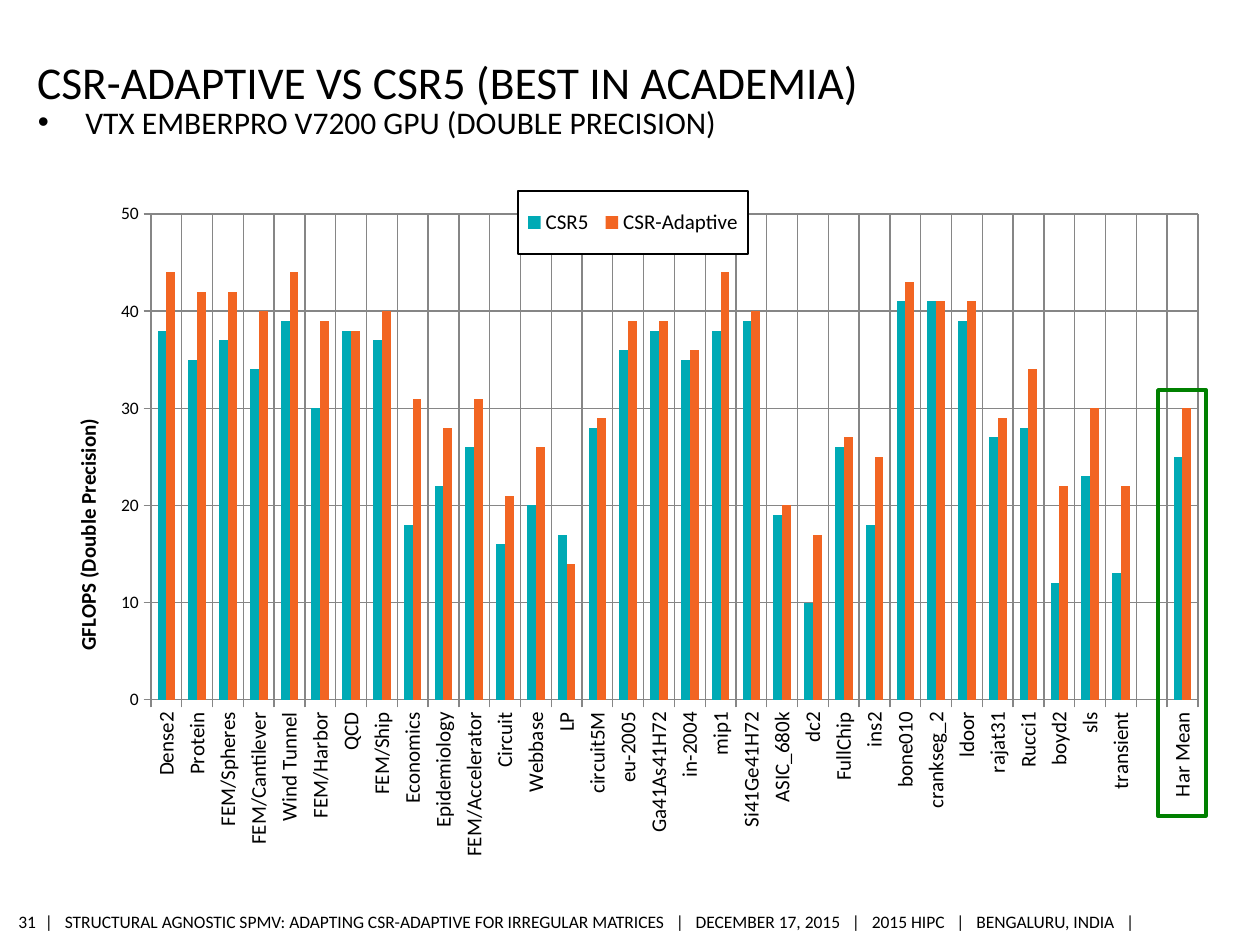
from lxml import etree
from pptx import Presentation
from pptx.chart.data import CategoryChartData
from pptx.dml.color import RGBColor
from pptx.enum.chart import XL_CHART_TYPE, XL_LEGEND_POSITION, XL_TICK_MARK
from pptx.enum.shapes import MSO_SHAPE
from pptx.enum.text import MSO_ANCHOR, MSO_AUTO_SIZE, PP_ALIGN
from pptx.oxml import parse_xml
from pptx.oxml.ns import nsdecls, qn
from pptx.util import Emu, Pt

PX = 914400 / 126
FONT = "Calibri"
COLORS = {"text": "000000", "grid": "868686", "csr5": "00AAB5",
          "adaptive": "F26522", "highlight": "008000"}

RESULTS = [
    ("Dense2", 38, 44), ("Protein", 35, 42), ("FEM/Spheres", 37, 42),
    ("FEM/Cantilever", 34, 40), ("Wind Tunnel", 39, 44), ("FEM/Harbor", 30, 39),
    ("QCD", 38, 38), ("FEM/Ship", 37, 40), ("Economics", 18, 31),
    ("Epidemiology", 22, 28), ("FEM/Accelerator", 26, 31), ("Circuit", 16, 21),
    ("Webbase", 20, 26), ("LP", 17, 14), ("circuit5M", 28, 29),
    ("eu-2005", 36, 39), ("Ga41As41H72", 38, 39), ("in-2004", 35, 36),
    ("mip1", 38, 44), ("Si41Ge41H72", 39, 40), ("ASIC_680k", 19, 20),
    ("dc2", 10, 17), ("FullChip", 26, 27), ("ins2", 18, 25),
    ("bone010", 41, 43), ("crankseg_2", 41, 41), ("ldoor", 39, 41),
    ("rajat31", 27, 29), ("Rucci1", 28, 34), ("boyd2", 12, 22),
    ("sls", 23, 30), ("transient", 13, 22), ("", None, None),
    ("Har Mean", 25, 30),
]


def px(*lengths):
    return [Emu(round(n * PX)) for n in lengths]


def rgb(name):
    return RGBColor.from_string(COLORS[name])


def style_font(font, size, bold=False):
    font.name, font.size, font.bold = FONT, Pt(size), bold
    font.color.rgb = rgb("text")


def write(tf, text, size, anchor, insets, align=PP_ALIGN.LEFT):
    """Fill a text frame; insets are left, top, right, bottom in px."""
    tf.text = text
    tf.vertical_anchor = anchor
    tf.margin_left, tf.margin_top, tf.margin_right, tf.margin_bottom = px(*insets)
    p = tf.paragraphs[0]
    p.alignment = align
    p.space_before = Pt(0)
    style_font(p.runs[0].font, size)


def add_heading(s, x, y, w):
    title, body = s.shapes.title, s.placeholders[1]
    title.left, title.top, title.width, title.height = px(x, y, w, 66)
    write(title.text_frame, "CSR-ADAPTIVE VS CSR5 (BEST IN ACADEMIA)", 26,
          MSO_ANCHOR.BOTTOM, (0, 6, 0, 0))
    body.left, body.top, body.width, body.height = px(x + 1, y + 60, w, 39)
    pPr = body.text_frame.paragraphs[0]._p.get_or_add_pPr()
    pPr.set("marL", "0")
    pPr.set("indent", "0")
    etree.SubElement(pPr, qn("a:buNone"))
    write(body.text_frame, "VTX EMBERPRO V7200 GPU (DOUBLE PRECISION)", 18,
          MSO_ANCHOR.TOP, (0, 0, 0, 0))


def add_footer(s, x, y, h):
    items = ["STRUCTURAL AGNOSTIC SPMV: ADAPTING CSR-ADAPTIVE FOR IRREGULAR MATRICES",
             "DECEMBER 17, 2015", "2015 HIPC", "BENGALURU, INDIA"]
    line = "|   " + "   |   ".join(items) + "   |"
    for text, left, w, align in [("31", x, 20, PP_ALIGN.RIGHT),
                                 (line, x + 29, 1100, PP_ALIGN.LEFT)]:
        tf = s.shapes.add_textbox(*px(left, y, w, h)).text_frame
        tf.word_wrap = False
        tf.auto_size = MSO_AUTO_SIZE.SHAPE_TO_FIT_TEXT
        write(tf, text, 10, MSO_ANCHOR.MIDDLE, (0, 5, 0, 5), align)


def place(part, index, box, frame, inner=False):
    """Give a chart part a manual layout; box is in px within the frame size."""
    for old in part.findall(qn("c:layout")):
        part.remove(old)
    layout = etree.Element(qn("c:layout"))
    manual = etree.SubElement(layout, qn("c:manualLayout"))
    if inner:
        etree.SubElement(manual, qn("c:layoutTarget")).set("val", "inner")
    for tag in ("xMode", "yMode"):
        etree.SubElement(manual, qn(f"c:{tag}")).set("val", "edge")
    for tag, length, full in zip("xywh", box, frame * 2):
        etree.SubElement(manual, qn(f"c:{tag}")).set("val", f"{length / full:.4f}")
    part.insert(index, layout)


def style_axis(axis, size):
    axis.has_major_gridlines = True
    axis.major_tick_mark = XL_TICK_MARK.CROSS
    axis.minor_tick_mark = XL_TICK_MARK.NONE
    for line in (axis.major_gridlines.format.line, axis.format.line):
        line.color.rgb = rgb("grid")
        line.width = Pt(0.75)
    style_font(axis.tick_labels.font, size)


def add_results_chart(s, x, y, w, h):
    data = CategoryChartData()
    names, csr5, adaptive = zip(*RESULTS)
    data.categories = names
    data.add_series("CSR5", csr5)
    data.add_series("CSR-Adaptive", adaptive)
    chart = s.shapes.add_chart(XL_CHART_TYPE.COLUMN_CLUSTERED, *px(x, y, w, h), data).chart
    style_font(chart.font, 10)
    chart.has_title = False
    plot = chart.plots[0]
    plot.vary_by_categories = False
    plot.gap_width, plot.overlap = 150, 0
    for series, color in zip(plot.series, ("csr5", "adaptive")):
        series.format.fill.solid()
        series.format.fill.fore_color.rgb = rgb(color)

    cat, val = chart.category_axis, chart.value_axis
    style_axis(cat, 12)
    style_axis(val, 10)
    val.minimum_scale, val.maximum_scale, val.major_unit = 0, 50, 10
    val.axis_title.text_frame.text = "GFLOPS (Double Precision)"
    style_font(val.axis_title.text_frame.paragraphs[0].runs[0].font, 12, True)
    for body, angle in ((chart.element.xpath(".//c:catAx/c:txPr/a:bodyPr")[0], -90),
                        (chart.element.xpath(".//c:valAx/c:title//a:bodyPr")[0], -90)):
        body.set("rot", str(angle * 60000))
        body.set("vert", "horz")

    chart.has_legend = True
    legend = chart.legend
    legend.position = XL_LEGEND_POSITION.TOP
    legend.include_in_layout = True
    style_font(legend.font, 12)
    legend_xml = chart.element.xpath(".//c:legend")[0]
    legend_xml.find(qn("c:overlay")).addnext(parse_xml(
        f'<c:spPr {nsdecls("c", "a")}><a:solidFill><a:srgbClr val="FFFFFF"/></a:solidFill>'
        f'<a:ln w="12700"><a:solidFill><a:srgbClr val="{COLORS["text"]}"/></a:solidFill>'
        '</a:ln></c:spPr>'))

    frame = (w, h)
    place(chart.element.xpath(".//c:plotArea")[0], 0, (113, 24, 1047, 486), frame, True)
    place(legend_xml, 1, (480, 1, 230, 63), frame)
    place(chart.element.xpath(".//c:valAx/c:title")[0], 1, (32, 225), frame)


def add_highlight(s, x, y, w, h):
    sp = s.shapes.add_shape(MSO_SHAPE.RECTANGLE, *px(x, y, w, h))
    sp.shadow.inherit = False
    sp.fill.background()
    sp.line.color.rgb = rgb("highlight")
    sp.line.width = Pt(2)


def main():
    prs = Presentation()
    prs.slide_width, prs.slide_height = px(1260, 945)
    s = prs.slides.add_slide(prs.slide_layouts[1])
    add_footer(s, 16, 905, 33)
    add_heading(s, 37, 43, 1058)
    add_results_chart(s, 38, 190, 1184, 680)
    add_highlight(s, 1158, 390, 48, 426)
    prs.save("out.pptx")


if __name__ == "__main__":
    main()
